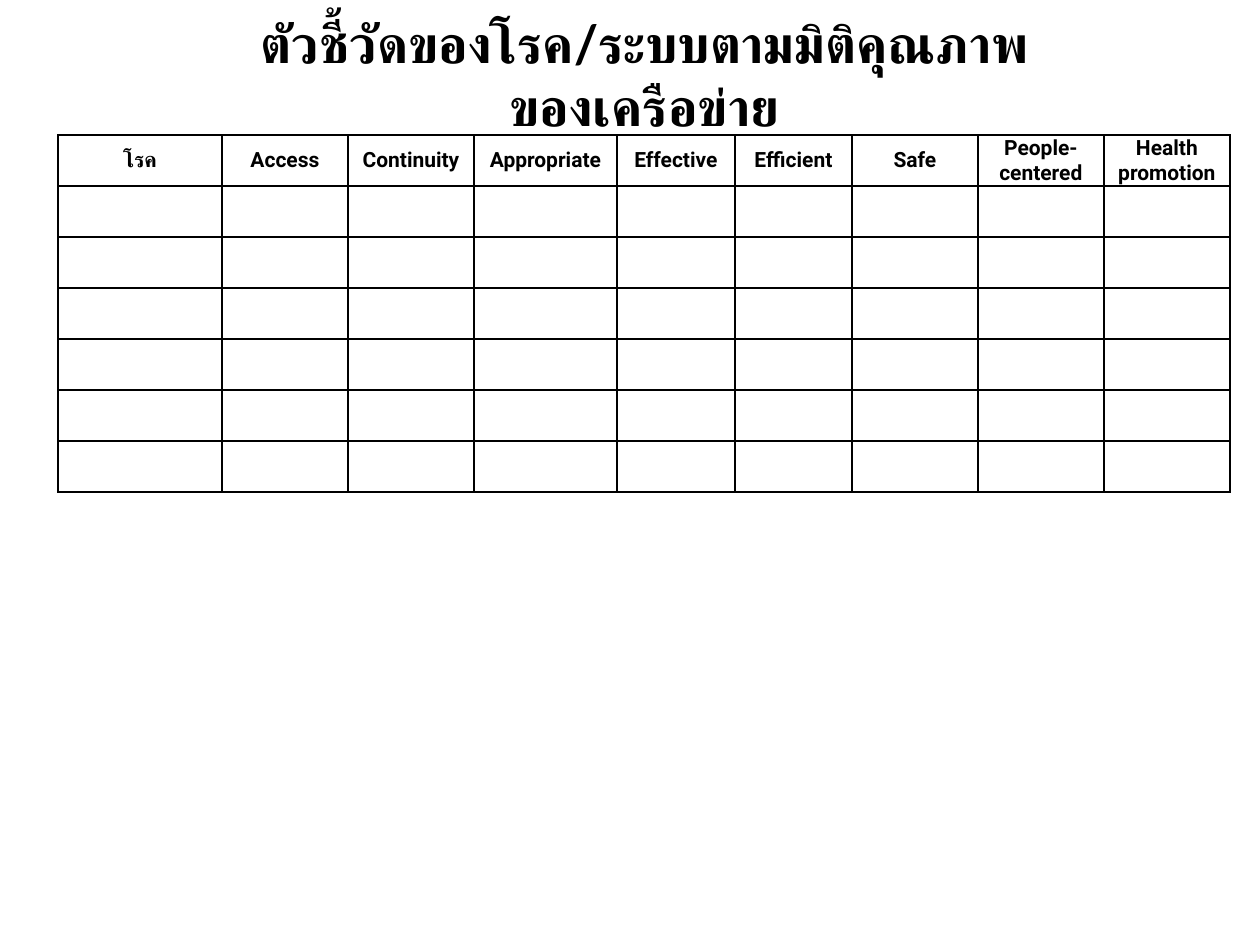
from lxml.etree import SubElement
from pptx import Presentation
from pptx.dml.color import RGBColor
from pptx.enum.text import MSO_ANCHOR, MSO_AUTO_SIZE, PP_ALIGN
from pptx.oxml.ns import qn
from pptx.util import Emu, Pt

BLACK = RGBColor(0x00, 0x00, 0x00)
WHITE = RGBColor(0xFF, 0xFF, 0xFF)

TITLE = "ตัวชี้วัดของโรค/ระบบตามมิติคุณภาพของเครือข่าย"
HEADERS = ["โรค", "Access", "Continuity", "Appropriate", "Effective",
           "Efficient", "Safe", "People-centered", "Health promotion"]
COLUMN_WIDTHS = [164, 126, 126, 143, 118, 117, 126, 126, 126]
ROW_COUNT, ROW_HEIGHT = 7, 51


def px(length):
    """Convert pixels to EMU at 126 pixels to the inch."""
    return Emu(round(length * 914400 / 126))


def format_text(paragraph, font_name, size):
    paragraph.alignment = PP_ALIGN.CENTER
    for run in paragraph.runs:
        font = run.font
        font.name, font.size, font.bold = font_name, Pt(size), True
        font.color.rgb = BLACK
        # Thai text takes the complex-script font
        SubElement(run._r.get_or_add_rPr(), qn("a:cs"), typeface=font_name)


def add_title(slide):
    title = slide.shapes.title
    title.left, title.top, title.width, title.height = map(px, (233, 37, 823, 73))
    frame = title.text_frame
    frame.text = TITLE
    frame.word_wrap = True
    frame.auto_size = MSO_AUTO_SIZE.NONE
    frame.vertical_anchor = MSO_ANCHOR.MIDDLE
    frame.margin_left = frame.margin_right = px(9)
    frame.margin_top = frame.margin_bottom = px(5)
    format_text(frame.paragraphs[0], "Lato", 30)


def set_borders(cell):
    properties = cell._tc.get_or_add_tcPr()
    for position, side in enumerate(("a:lnL", "a:lnR", "a:lnT", "a:lnB")):
        line = SubElement(properties, qn(side), w=str(Pt(1)))
        fill = SubElement(line, qn("a:solidFill"))
        SubElement(fill, qn("a:srgbClr"), val=str(BLACK))
        properties.insert(position, line)


def format_cell(cell):
    cell.fill.solid()
    cell.fill.fore_color.rgb = WHITE
    cell.vertical_anchor = MSO_ANCHOR.MIDDLE
    cell.margin_left = cell.margin_right = px(8)
    cell.margin_top = cell.margin_bottom = 0
    set_borders(cell)


def add_indicator_table(slide):
    frame = slide.shapes.add_table(
        ROW_COUNT, len(HEADERS), px(58), px(135),
        px(sum(COLUMN_WIDTHS)), px(ROW_COUNT * ROW_HEIGHT))
    table = frame.table
    table.first_row = table.horz_banding = False
    for column, width in zip(table.columns, COLUMN_WIDTHS):
        column.width = px(width)
    for row in table.rows:
        row.height = px(ROW_HEIGHT)
    for cell in table.iter_cells():
        format_cell(cell)
    for cell, header in zip(table.rows[0].cells, HEADERS):
        cell.text_frame.text = header
        format_text(cell.text_frame.paragraphs[0], "Roboto", 12)


def main():
    presentation = Presentation()
    presentation.slide_width, presentation.slide_height = px(1260), px(945)
    slide = presentation.slides.add_slide(presentation.slide_layouts[5])
    add_title(slide)
    add_indicator_table(slide)
    presentation.save("out.pptx")


if __name__ == "__main__":
    main()
